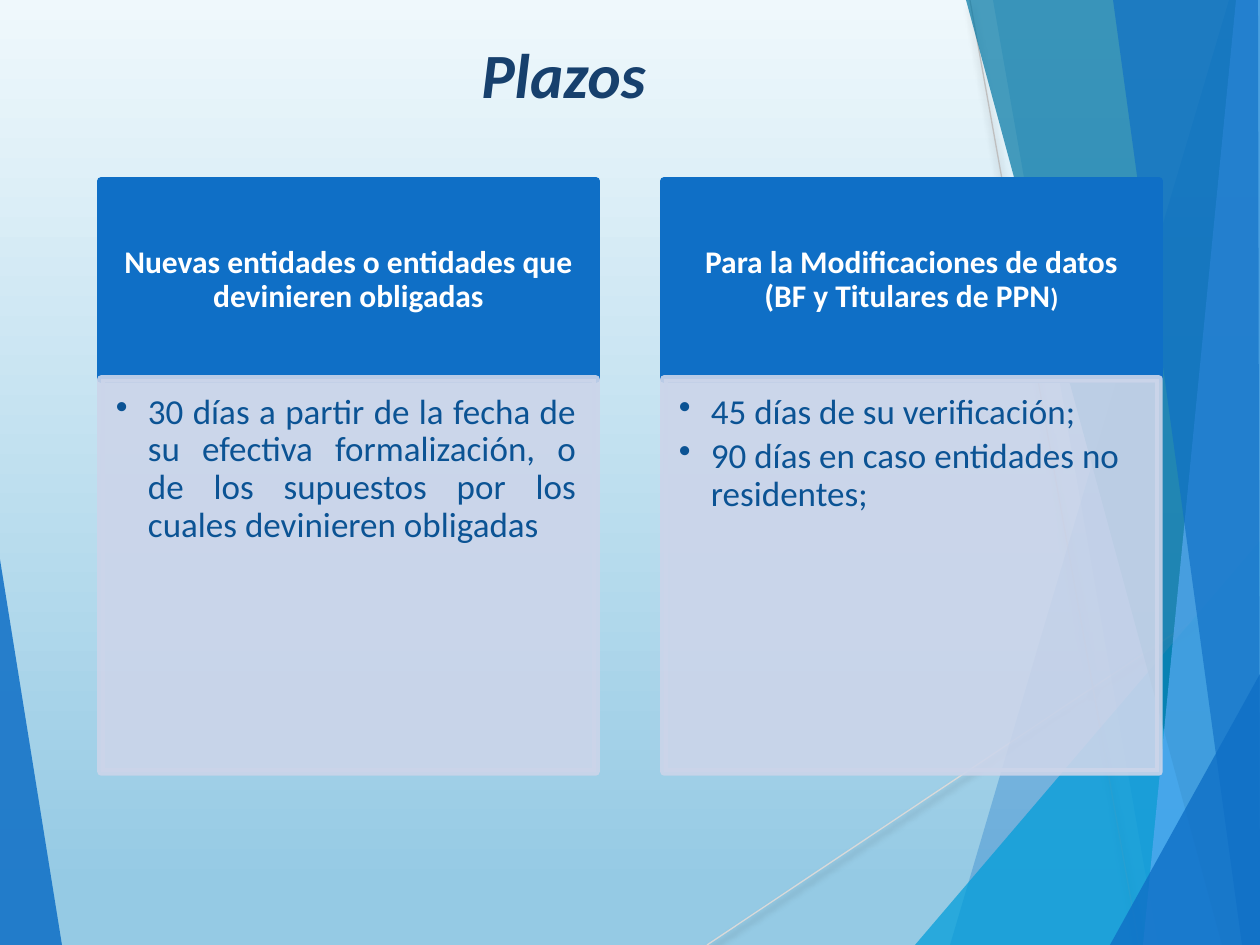
from pptx import Presentation
from pptx.dml.color import RGBColor
from pptx.enum.shapes import MSO_CONNECTOR, MSO_SHAPE
from pptx.enum.text import MSO_ANCHOR, MSO_AUTO_SIZE, PP_ALIGN
from pptx.oxml import parse_xml
from pptx.oxml.ns import qn
from pptx.util import Pt
from lxml import etree

RECT, STRAIGHT = MSO_SHAPE.RECTANGLE, MSO_CONNECTOR.STRAIGHT
TOP, MIDDLE = MSO_ANCHOR.TOP, MSO_ANCHOR.MIDDLE
LEFT, CENTER, JUSTIFY = PP_ALIGN.LEFT, PP_ALIGN.CENTER, PP_ALIGN.JUSTIFY
GROW = MSO_AUTO_SIZE.SHAPE_TO_FIT_TEXT

PX = 9144000 / 1260  # EMU per px
W, H = 1260, 945

THEME = {
    "font": "Calibri", "title_size": 36, "head_size": 18, "small_size": 15, "body_size": 20,
    "sky_top": "EFF8FC", "sky_bottom": "95CAE4",
    "blue": "0F6FC6", "cyan": "009DD9", "teal": "0076A3", "light": "59AAF2",
    "title": "17406D", "white": "FFFFFF", "panel": "CCD5EA", "body": "0B5394",
    "line_light": "D9D9D9", "line_dark": "BFBFBF",
}

LINE_SHADOW = (
    '<a:effectLst xmlns:a="http://schemas.openxmlformats.org/drawingml/2006/main">'
    '<a:outerShdw blurRad="50800" dist="38100" dir="5400000" algn="t" rotWithShape="0">'
    '<a:srgbClr val="000000"><a:alpha val="35000"/></a:srgbClr></a:outerShdw></a:effectLst>')


def paint(fill, color, alpha=100):
    fill.solid()
    fill.fore_color.rgb = RGBColor.from_string(THEME[color])
    if alpha < 100:
        clr = next(fill._xPr.iter(qn("a:srgbClr")))
        etree.SubElement(clr, qn("a:alpha")).set("val", str(alpha * 1000))


def write(sp, paragraphs, color, align=LEFT, anchor=TOP, inset=(13, 6, 13, 6),
          bold=False, italic=False, spacing=1.0, bullet=False):
    """Each paragraph is a list of (text, size) runs."""
    tf = sp.text_frame
    tf.word_wrap = True
    tf.vertical_anchor = anchor
    tf.margin_left, tf.margin_top, tf.margin_right, tf.margin_bottom = (int(v * PX) for v in inset)
    for i, runs in enumerate(paragraphs):
        p = tf.paragraphs[0] if i == 0 else tf.add_paragraph()
        p.alignment, p.line_spacing = align, spacing
        if bullet:
            p.level = 1
            p.space_after = Pt(3.6)
            pPr = p._p.get_or_add_pPr()
            pPr.set("marL", str(int(32 * PX)))
            pPr.set("indent", str(int(-32 * PX)))
            etree.SubElement(pPr, qn("a:buChar")).set("char", "•")
        for text, size in runs:
            r = p.add_run()
            r.text = text
            r.font.name, r.font.size = THEME["font"], Pt(THEME[size])
            r.font.bold, r.font.italic = bold, italic
            r.font.color.rgb = RGBColor.from_string(THEME[color])


prs = Presentation()
prs.slide_width, prs.slide_height = int(W * PX), int(H * PX)
s = prs.slides.add_slide(prs.slide_layouts[6])

# Background gradient
bg = s.background.fill
bg.gradient()
bg.gradient_angle = 270
for stop, color, position in zip(bg.gradient_stops, ("sky_top", "sky_bottom"), (0, 0.94)):
    stop.color.rgb = RGBColor.from_string(THEME[color])
    stop.position = position

# Thin lines behind the facets
for x1, y1, x2, y2, color in [(707, H, W, 576, "line_light"), (970, 0, 1139, H, "line_dark")]:
    line = s.shapes.add_connector(STRAIGHT, *(int(v * PX) for v in (x1, y1, x2, y2)))
    line.line.width = Pt(0.75)
    paint(line.line.fill, color)
    line._element.spPr.append(parse_xml(LINE_SHADOW))

# Translucent facets: colour, opacity, outline
facets = [
    ("blue", 85, [(-1, 553), (62, H), (-1, H)]),
    ("blue", 30, [(1229, 0), (950, H), (W, H), (W, 0)]),
    ("blue", 20, [(993, 0), (1158, H), (W, H), (W, 0)]),
    ("cyan", 72, [(915, H), (W, 541), (W, H)]),
    ("teal", 70, [(966, 0), (1222, H), (W, H), (W, 0)]),
    ("light", 70, [(1236, 0), (1143, H), (W, H), (W, 0)]),
    ("blue", 65, [(1113, 0), (1242, H), (W, H), (1258, 0)]),
    ("blue", 80, [(1110, H), (W, 674), (W, H)]),
]
for color, alpha, points in facets:
    builder = s.shapes.build_freeform(*points[0], scale=PX)
    builder.add_line_segments(points[1:], close=True)
    sp = builder.convert_to_shape()
    sp.shadow.inherit = False
    sp.line.fill.background()
    paint(sp.fill, color, alpha)

# Title
title = s.shapes.add_textbox(*(int(v * PX) for v in (24, 30, 1079, 90)))
write(title, [[("Plazos", "title_size")]], "title", align=CENTER, bold=True, italic=True)
title.text_frame.auto_size = GROW

# Two cards, each a header over a bulleted panel
CARD_LEFT, CARD_TOP, CARD_W, CARD_STEP = 101, 181, 495, 563
HEAD_H, BODY_H = 198, 393
cards = [
    ([("Nuevas entidades o entidades que devinieren obligadas", "head_size")],
     ["30 días a partir de la fecha de su efectiva formalización, "
      "o de los supuestos por los cuales devinieren obligadas"], JUSTIFY),
    ([("Para la Modificaciones de datos (BF y Titulares de PPN", "head_size"), (")", "small_size")],
     ["45 días de su verificación;", "90 días en caso entidades no residentes;"], LEFT),
]
for i, (heading, items, align) in enumerate(cards):
    x = CARD_LEFT + i * CARD_STEP
    parts = []
    for y, h, color, alpha in [(CARD_TOP, HEAD_H, "blue", 100),
                               (CARD_TOP + HEAD_H, BODY_H, "panel", 90)]:
        sp = s.shapes.add_shape(RECT, *(int(v * PX) for v in (x, y, CARD_W, h)))
        sp.shadow.inherit = False
        sp.line.width = Pt(4.33)
        paint(sp.fill, color, alpha)
        paint(sp.line.fill, color, alpha)
        parts.append(sp)
    head, body = parts
    write(head, [heading], "white", align=CENTER, anchor=MIDDLE, inset=(18, 10, 18, 10),
          bold=True, spacing=0.9)
    write(body, [[(item, "body_size")] for item in items], "body", align=align,
          inset=(15, 15, 20, 21), spacing=0.9, bullet=True)

prs.save("out.pptx")
